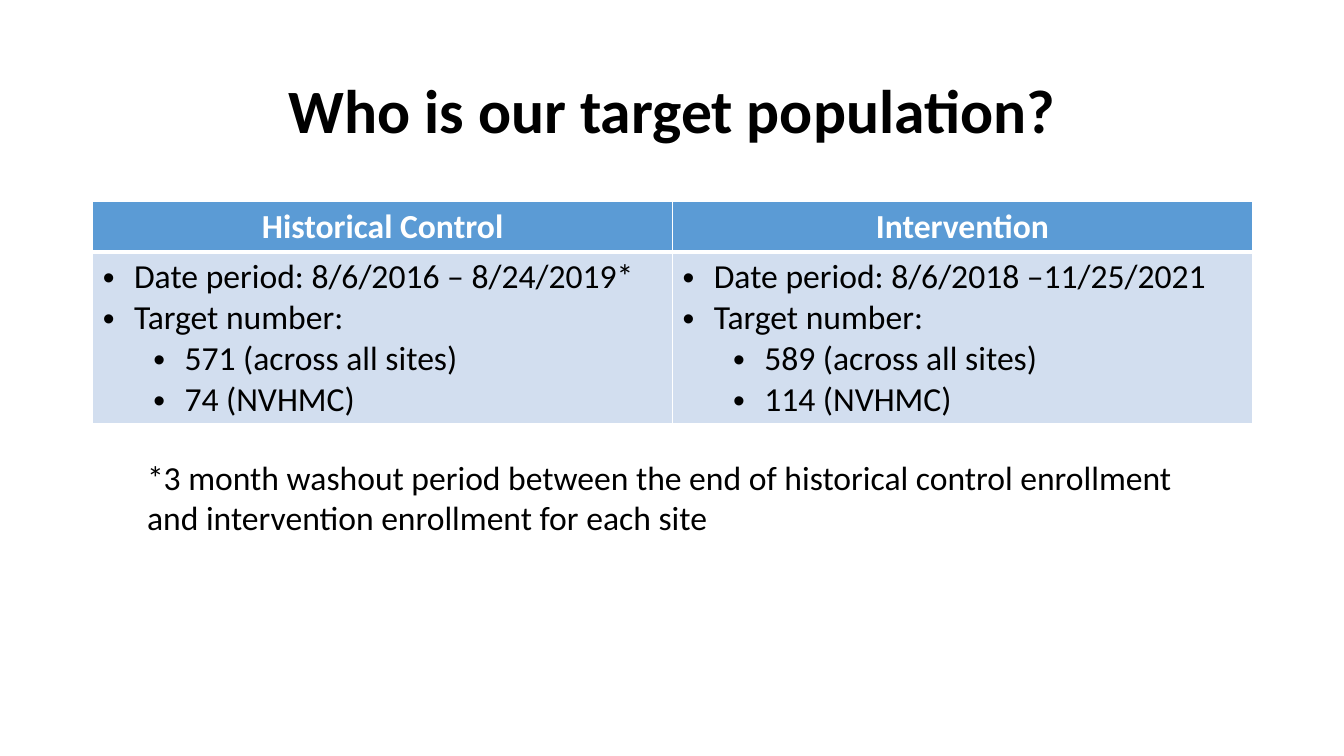
from lxml.etree import SubElement
from pptx import Presentation
from pptx.dml.color import RGBColor
from pptx.enum.text import MSO_ANCHOR, PP_ALIGN
from pptx.oxml.ns import qn
from pptx.util import Inches, Pt

BLACK = RGBColor(0x00, 0x00, 0x00)
WHITE = RGBColor(0xFF, 0xFF, 0xFF)
HEADER_BLUE = RGBColor(0x5B, 0x9B, 0xD5)
BODY_BLUE = RGBColor(0xD2, 0xDE, 0xEF)

GROUPS = [
    ("Historical Control", [
        (0, "Date period: 8/6/2016 – 8/24/2019*"),
        (0, "Target number:"),
        (1, "571 (across all sites)"),
        (1, "74 (NVHMC)"),
    ]),
    ("Intervention", [
        (0, "Date period: 8/6/2018 –11/25/2021"),
        (0, "Target number:"),
        (1, "589 (across all sites)"),
        (1, "114 (NVHMC)"),
    ]),
]


def write(para, text, size=24, color=BLACK, bold=False):
    para.text = text
    font = para.runs[0].font
    font.name = "Calibri"
    font.size = Pt(size)
    font.bold = bold
    font.color.rgb = color


def add_text(page, left, top, width, height, text, **style):
    frame = page.shapes.add_textbox(
        Inches(left), Inches(top), Inches(width), Inches(height)).text_frame
    frame.word_wrap = True
    write(frame.paragraphs[0], text, **style)
    return frame


def add_bullet(para, level):
    para.level = level
    properties = para._p.get_or_add_pPr()
    properties.set("marL", str(Inches(0.31 + 0.5 * level)))
    properties.set("indent", str(Inches(-0.31)))
    SubElement(properties, qn("a:buFont"), typeface="Arial")
    SubElement(properties, qn("a:buChar"), char="•")


def style_cell(cell, color, top=1, bottom=1):
    properties = cell._tc.get_or_add_tcPr()
    for side, points in (("L", 1), ("R", 1), ("T", top), ("B", bottom)):
        line = SubElement(properties, qn(f"a:ln{side}"), w=str(Pt(points)))
        fill = SubElement(line, qn("a:solidFill"))
        SubElement(fill, qn("a:srgbClr"), val=str(WHITE))
    cell.fill.solid()
    cell.fill.fore_color.rgb = color


def add_group_table(page):
    table = page.shapes.add_table(
        2, len(GROUPS), Inches(0.92), Inches(2), Inches(11.5), Inches(2.2)).table
    table.rows[0].height = Inches(0.5)
    table.rows[1].height = Inches(1.7)
    for column, (heading, items) in enumerate(GROUPS):
        header, body = table.cell(0, column), table.cell(1, column)
        style_cell(header, HEADER_BLUE, bottom=3)
        style_cell(body, BODY_BLUE, top=3)
        para = header.text_frame.paragraphs[0]
        write(para, heading, color=WHITE, bold=True)
        para.alignment = PP_ALIGN.CENTER
        body.text_frame.text = "\n".join(text for level, text in items)
        for para, (level, text) in zip(body.text_frame.paragraphs, items):
            write(para, text)
            add_bullet(para, level)


def main():
    deck = Presentation()
    deck.slide_width = Inches(13.33)
    deck.slide_height = Inches(7.5)
    page = deck.slides.add_slide(deck.slide_layouts[6])

    title = add_text(page, 0.92, 0.4, 11.5, 1.45,
                     "Who is our target population?", size=44, bold=True)
    title.vertical_anchor = MSO_ANCHOR.MIDDLE
    title.paragraphs[0].alignment = PP_ALIGN.CENTER
    title.paragraphs[0].line_spacing = 0.9

    add_group_table(page)
    add_text(page, 1.36, 4.48, 10.62, 0.91,
             "*3 month washout period between the end of historical control "
             "enrollment and intervention enrollment for each site")
    deck.save("out.pptx")


if __name__ == "__main__":
    main()
